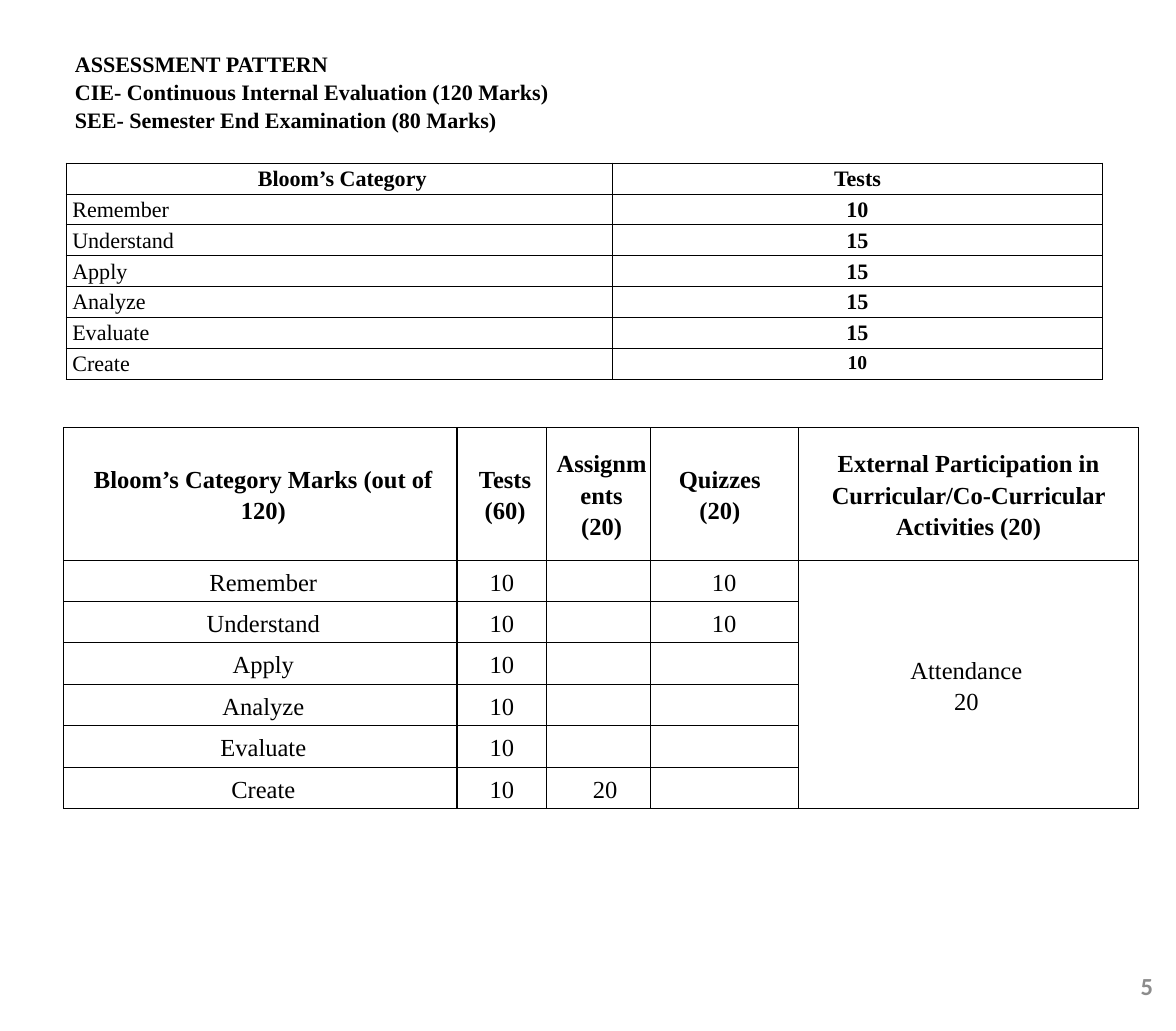
"""Build the assessment pattern slide with its two marks tables."""
from dataclasses import dataclass, replace
from typing import Optional

from lxml.etree import SubElement
from pptx import Presentation
from pptx.dml.color import RGBColor
from pptx.enum.text import MSO_ANCHOR, PP_ALIGN
from pptx.oxml.ns import qn
from pptx.slide import Slide
from pptx.table import _Cell
from pptx.text.text import TextFrame
from pptx.util import Inches, Pt


@dataclass(frozen=True)
class Theme:
    """Colours, fonts and type sizes."""
    ink: str = "000000"
    grey: str = "8C8C8C"
    serif: str = "Times New Roman"
    sans: str = "Calibri"
    small: int = 16
    body: int = 18
    large: int = 20
    edge: float = 1


@dataclass(frozen=True)
class Entry:
    """One table cell: its text, format and side margins."""
    text: str = ""
    bold: bool = False
    size: int = Theme.body
    align: PP_ALIGN = PP_ALIGN.CENTER
    left: float = 0
    right: float = 0


@dataclass(frozen=True)
class Grid:
    """One table: its place, tracks and cells."""
    left: float
    top: float
    cols: tuple[float, ...]
    rows: tuple[float, ...]
    cells: list[list[Entry]]
    anchor: MSO_ANCHOR
    merge: Optional[int] = None


THEME = Theme()
LEVELS = ("Remember", "Understand", "Apply", "Analyze", "Evaluate", "Create")
SCORES = (10, 15, 15, 15, 15, 10)
INDENT = 0.07


def write(frame: TextFrame, text: str, *, size: int, bold: bool = False,
          align: PP_ALIGN = PP_ALIGN.LEFT, font: str = THEME.serif,
          color: str = THEME.ink, line: float = 1.0) -> None:
    """Fill a frame with one paragraph for each line of text."""
    for place, part in enumerate(text.split("\n")):
        para = frame.add_paragraph() if place else frame.paragraphs[0]
        para.alignment = align
        para.line_spacing = line
        para.font.size = Pt(size)
        run = para.add_run()
        run.text = part
        run.font.size = Pt(size)
        run.font.bold = bold
        run.font.name = font
        run.font.color.rgb = RGBColor.from_string(color)


def add_label(slide: Slide, text: str, left: float, top: float, width: float,
              height: float, inset: Optional[float] = None, **style) -> None:
    """Add a wrapped text box."""
    box = slide.shapes.add_textbox(Inches(left), Inches(top), Inches(width), Inches(height))
    frame = box.text_frame
    frame.word_wrap = True
    if inset is not None:
        frame.margin_left = frame.margin_right = Inches(inset)
        frame.margin_top = frame.margin_bottom = Inches(inset)
    write(frame, text, **style)


def outline(cell: _Cell) -> None:
    """Draw a solid line on all four sides of a cell."""
    props = cell._tc.get_or_add_tcPr()
    for place, side in enumerate("LRTB"):
        line = SubElement(props, qn(f"a:ln{side}"), w=str(Pt(THEME.edge)))
        fill = SubElement(line, qn("a:solidFill"))
        SubElement(fill, qn("a:srgbClr"), val=THEME.ink)
        props.insert(place, line)


def add_grid(slide: Slide, grid: Grid) -> None:
    """Add a plain ruled table."""
    shape = slide.shapes.add_table(
        len(grid.rows), len(grid.cols), Inches(grid.left), Inches(grid.top),
        Inches(sum(grid.cols)), Inches(sum(grid.rows)))
    table = shape.table
    table.first_row = table.horz_banding = False
    for col, width in zip(table.columns, grid.cols):
        col.width = Inches(width)
    for row, height in zip(table.rows, grid.rows):
        row.height = Inches(height)
    for y, entries in enumerate(grid.cells):
        for x, entry in enumerate(entries):
            cell = table.cell(y, x)
            cell.fill.background()
            outline(cell)
            cell.margin_left, cell.margin_right = Inches(entry.left), Inches(entry.right)
            cell.margin_top = cell.margin_bottom = 0
            cell.vertical_anchor = grid.anchor
            if entry.text:
                write(cell.text_frame, entry.text, size=entry.size, bold=entry.bold,
                      align=entry.align, line=1.15)
    if grid.merge is not None:
        table.cell(1, grid.merge).merge(table.cell(len(grid.rows) - 1, grid.merge))


def test_grid() -> Grid:
    """Describe the table of test marks."""
    cells = [[Entry("Bloom’s Category", bold=True, left=INDENT), Entry("Tests", bold=True)]]
    cells += [[Entry(level, align=PP_ALIGN.LEFT, left=INDENT), Entry(str(score), bold=True)]
              for level, score in zip(LEVELS, SCORES)]
    cells[-1][1] = replace(cells[-1][1], size=THEME.small)
    return Grid(0.75, 1.85, (6.19, 5.56), (0.35,) * 7, cells, MSO_ANCHOR.TOP)


def mark_grid() -> Grid:
    """Describe the table that splits the 120 marks."""
    base = Entry(size=THEME.large)
    head = replace(base, bold=True, left=INDENT)
    cells = [[
        replace(head, text="Bloom’s Category Marks (out of 120)"),
        replace(head, text="Tests\n(60)"),
        replace(head, text="Assignments\n(20)"),
        replace(head, text="Quizzes\n(20)", left=0, right=0.1),
        replace(head, text="External Participation in Curricular/Co-Curricular Activities (20)",
                right=INDENT),
    ]]
    for level in LEVELS:
        task = "20" if level == "Create" else ""
        quiz = "10" if level in LEVELS[:2] else ""
        other = "Attendance\n20" if level == LEVELS[0] else ""
        cells.append([
            replace(base, text=level, left=INDENT), replace(base, text="10"),
            replace(base, text=task, left=0.15), replace(base, text=quiz),
            replace(base, text=other, right=0.05)])
    return Grid(0.72, 4.85, (4.46, 1.02, 1.17, 1.68, 3.86), (1.5,) + (0.47,) * 6,
                cells, MSO_ANCHOR.MIDDLE, merge=4)


def main() -> None:
    """Build and save the slide."""
    deck = Presentation()
    deck.slide_width, deck.slide_height = Inches(13.33), Inches(11.69)
    slide = deck.slides.add_slide(deck.slide_layouts[6])
    title = ("ASSESSMENT PATTERN\nCIE- Continuous Internal Evaluation (120 Marks)\n"
             "SEE- Semester End Examination (80 Marks)")
    add_label(slide, title, 0.75, 0.51, 11.75, 1.01, size=THEME.body, bold=True, line=1.05)
    for grid in (test_grid(), mark_grid()):
        add_grid(slide, grid)
    add_label(slide, "5", 12.42, 11.01, 0.65, 0.34, inset=0, size=THEME.large, bold=True,
              align=PP_ALIGN.RIGHT, font=THEME.sans, color=THEME.grey)
    deck.save("out.pptx")


if __name__ == "__main__":
    main()
